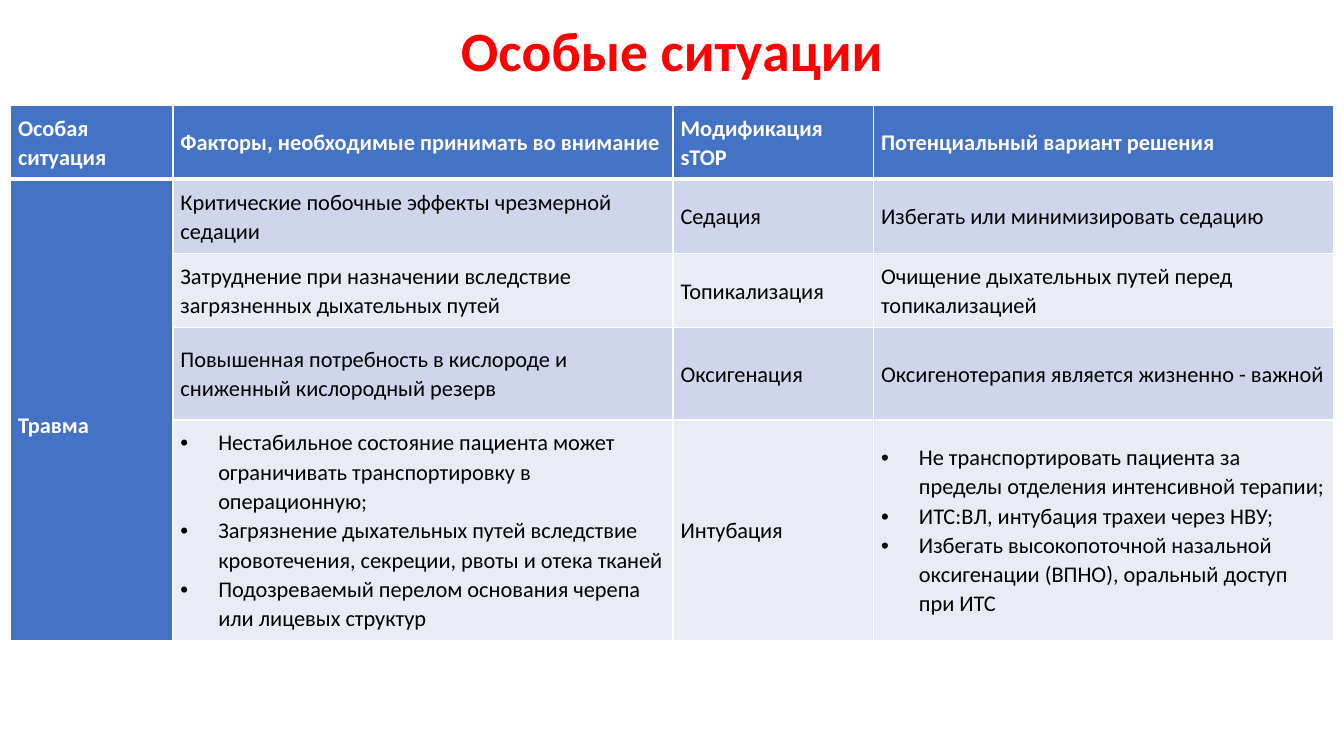
from dataclasses import dataclass

from pptx import Presentation
from pptx.dml.color import RGBColor as RGB
from pptx.enum.text import MSO_ANCHOR as Anchor, PP_ALIGN as Align
from pptx.oxml.ns import qn
from pptx.util import Pt
from lxml.etree import SubElement as Sub


@dataclass(frozen=True)
class Theme:
    font: str = "Calibri"
    title: float = 39.6
    body: float = 16
    red: str = "FF0000"
    blue: str = "4472C4"
    dark: str = "CFD5EA"
    pale: str = "E9EBF5"
    white: str = "FFFFFF"
    black: str = "000000"


T = Theme()
PAD = 5.4
INDENT = 27
LINE = 21
COLS = [116, 357.2, 143.3, 328.4]
ROWS = [53, 53, 53, 66, 157.5]

HEAD = ["Особая ситуация", "Факторы, необходимые принимать во внимание",
        "Модификация sTOP", "Потенциальный вариант решения"]
GROUP = "Травма"
# A list in a cell becomes bullets
BODY = [
    ["Критические побочные эффекты чрезмерной седации", "Седация",
     "Избегать или минимизировать седацию"],
    ["Затруднение при назначении вследствие загрязненных дыхательных путей",
     "Топикализация", "Очищение дыхательных путей перед топикализацией"],
    ["Повышенная потребность в кислороде и сниженный кислородный резерв",
     "Оксигенация", "Оксигенотерапия является жизненно - важной"],
    [["Нестабильное состояние пациента может ограничивать транспортировку в операционную;",
      "Загрязнение дыхательных путей вследствие кровотечения, секреции, рвоты и отека тканей",
      "Подозреваемый перелом основания черепа или лицевых структур"],
     "Интубация",
     ["Не транспортировать пациента за пределы отделения интенсивной терапии;",
      "ИТС:ВЛ, интубация трахеи через НВУ;",
      "Избегать высокопоточной назальной оксигенации (ВПНО), оральный доступ при ИТС"]],
]


def add_run(para, text, size, color, bold):
    run = para.add_run()
    run.text = text
    font = run.font
    font.name, font.size, font.bold = T.font, Pt(size), bold
    font.color.rgb = RGB.from_string(color)


def add_dot(para):
    props = para._p.get_or_add_pPr()
    props.set("marL", str(Pt(INDENT)))
    props.set("indent", str(-Pt(INDENT)))
    Sub(props, qn("a:buFont"), typeface="Arial")
    Sub(props, qn("a:buChar"), char="•")


def add_edges(cell, top, low):
    props = cell._tc.get_or_add_tcPr()
    for side, width in zip("LRTB", (1, 1, top, low)):
        line = Sub(props, qn(f"a:ln{side}"), w=str(Pt(width)))
        fill = Sub(line, qn("a:solidFill"))
        Sub(fill, qn("a:srgbClr"), val=T.white)


def fill_cell(cell, text, back, color, bold=False, top=1, low=1):
    add_edges(cell, top, low)
    cell.fill.solid()
    cell.fill.fore_color.rgb = RGB.from_string(back)
    cell.vertical_anchor = Anchor.MIDDLE
    cell.margin_left = cell.margin_right = Pt(PAD)
    cell.margin_top = cell.margin_bottom = Pt(PAD)
    dots = isinstance(text, list)
    frame = cell.text_frame
    for i, item in enumerate(text if dots else [text]):
        para = frame.add_paragraph() if i else frame.paragraphs[0]
        para.line_spacing = 1.07
        if dots:
            add_dot(para)
        add_run(para, item, T.body, color, bold)


def add_title(slide, x, y, w, h):
    frame = slide.shapes.add_textbox(Pt(x), Pt(y), Pt(w), Pt(h)).text_frame
    frame.word_wrap = True
    frame.vertical_anchor = Anchor.TOP
    frame.margin_top = 0
    para = frame.paragraphs[0]
    para.alignment = Align.CENTER
    para.line_spacing = 0.9
    add_run(para, "Особые ситуации", T.title, T.red, True)


def add_grid(slide, x, y, w, h):
    grid = slide.shapes.add_table(len(ROWS), len(COLS),
                                  Pt(x), Pt(y), Pt(w), Pt(h)).table
    for col, size in zip(grid.columns, COLS):
        col.width = Pt(size * w / sum(COLS))
    for row, size in zip(grid.rows, ROWS):
        row.height = Pt(size * h / sum(ROWS))

    # Header row
    for c, text in enumerate(HEAD):
        fill_cell(grid.cell(0, c), text, T.blue, T.white, True, low=3)

    # Merged group cell, its label one half line below the middle
    group = grid.cell(1, 0)
    group.merge(grid.cell(len(BODY), 0))
    fill_cell(group, GROUP, T.blue, T.white, True, top=3)
    group.margin_top = Pt(PAD + LINE)

    # Banded body rows
    for r, row in enumerate(BODY, 1):
        back = T.dark if r % 2 else T.pale
        for c, text in enumerate(row, 1):
            fill_cell(grid.cell(r, c), text, back, T.black,
                      top=3 if r == 1 else 1)


def main():
    deck = Presentation()
    deck.slide_width, deck.slide_height = Pt(960), Pt(540)
    slide = deck.slides.add_slide(deck.slide_layouts[6])
    add_title(slide, 66, 17, 828, 86.4)
    add_grid(slide, 7.5, 75, sum(COLS), sum(ROWS))
    deck.save("out.pptx")


if __name__ == "__main__":
    main()
